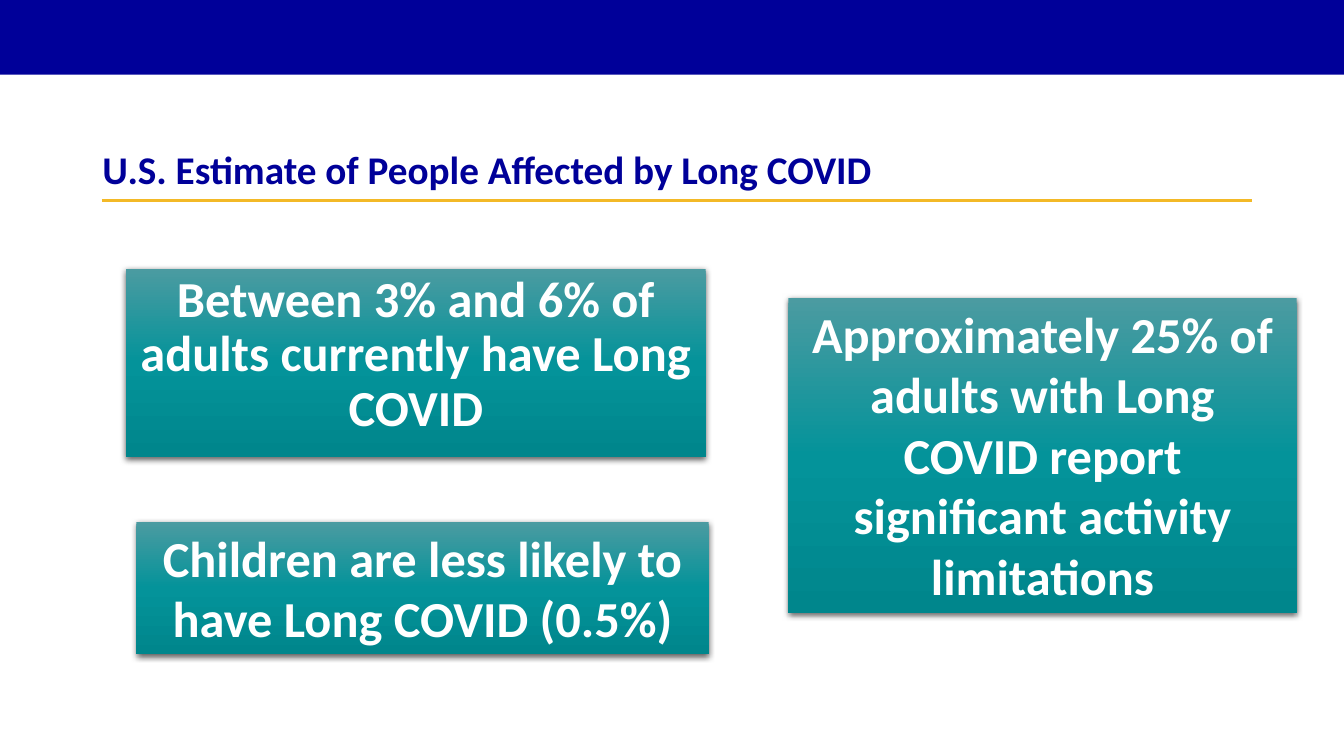
from pptx import Presentation
from pptx.dml.color import RGBColor as Rgb
from pptx.enum.shapes import MSO_CONNECTOR as Conn, MSO_SHAPE as Form
from pptx.enum.text import MSO_ANCHOR as Anchor, MSO_AUTO_SIZE as Fit, PP_ALIGN as Align
from pptx.oxml import parse_xml
from pptx.oxml.ns import nsdecls
from pptx.util import Pt
from lxml.etree import SubElement

PX = 9525
HUES = {"navy": "000099", "gold": "F3B927", "white": "FFFFFF", "black": "000000",
        "light": "4B9BA1", "teal": "04939A", "deep": "00868C"}
STOPS = [(0, "light"), (50, "teal"), (100, "deep")]
CARDS = [
    ((120, 256, 552, 179), "Between 3% and 6% of adults currently have Long COVID", 0.9),
    ((751, 284, 484, 300), "Approximately 25% of adults with Long COVID report significant activity limitations", 1),
    ((130, 497, 545, 126), "Children are less likely to have Long COVID (0.5%)", 1),
]


def px(*nums):
    return [n * PX for n in nums]


def hue(name):
    return Rgb.from_string(HUES[name])


def write(shape, text, size, color, align=Align.LEFT, anchor=Anchor.TOP, lead=1):
    frame = shape.text_frame
    frame.word_wrap = True
    frame.auto_size = Fit.NONE
    frame.vertical_anchor = anchor
    para = frame.paragraphs[0]
    para.alignment = align
    para.line_spacing = lead
    para.space_before = Pt(0)
    run = para.add_run()
    run.text = text
    font = run.font
    font.name, font.size, font.bold = "Calibri", Pt(size), True
    font.color.rgb = hue(color)


def block(slide, box):
    shape = slide.shapes.add_shape(Form.RECTANGLE, *px(*box))
    shape.line.fill.background()
    shape.shadow.inherit = False
    return shape


def shade(shape):
    stops = "".join(f'<a:gs pos="{at * 1000}"><a:srgbClr val="{HUES[name]}"/></a:gs>'
                    for at, name in STOPS)
    props = shape._element.spPr
    props.insert(2, parse_xml(
        f'<a:gradFill {nsdecls("a")} rotWithShape="1"><a:gsLst>{stops}</a:gsLst>'
        '<a:lin ang="5400000" scaled="0"/></a:gradFill>'))
    props.find("{*}effectLst").append(parse_xml(
        f'<a:outerShdw {nsdecls("a")} blurRad="{Pt(4.5)}" dist="{Pt(1.5)}" dir="5400000" '
        f'algn="ctr" rotWithShape="0"><a:srgbClr val="{HUES["black"]}">'
        '<a:alpha val="63000"/></a:srgbClr></a:outerShdw>'))


def header(slide, box):
    x, y, w, h = box
    band = block(slide, (x, y, w, 71))
    band.fill.solid()
    band.fill.fore_color.rgb = hue("navy")
    rule = slide.shapes.add_connector(
        Conn.STRAIGHT, *px(x + 97, y + h, x + 1192, y + h))
    rule.line.color.rgb = hue("gold")
    rule.line.width = Pt(1.5)
    props = rule._element.spPr
    SubElement(props, "{%s}effectLst" % props.nsmap["a"])
    title = slide.shapes.title
    title.left, title.top, title.width, title.height = px(x + 88, y + 127, 1104, 62)
    write(title, "U.S. Estimate of People Affected by Long COVID", 28, "navy",
          anchor=Anchor.BOTTOM, lead=0.9)


def card(slide, box, text, lead):
    shape = block(slide, box)
    shade(shape)
    write(shape, text, 36, "white", align=Align.CENTER, lead=lead)


def main():
    deck = Presentation()
    deck.slide_width, deck.slide_height = px(1280, 720)
    slide = deck.slides.add_slide(deck.slide_layouts[5])
    header(slide, (0, 0, 1280, 191))
    for box, text, lead in CARDS:
        card(slide, box, text, lead)
    deck.save("out.pptx")


if __name__ == "__main__":
    main()
